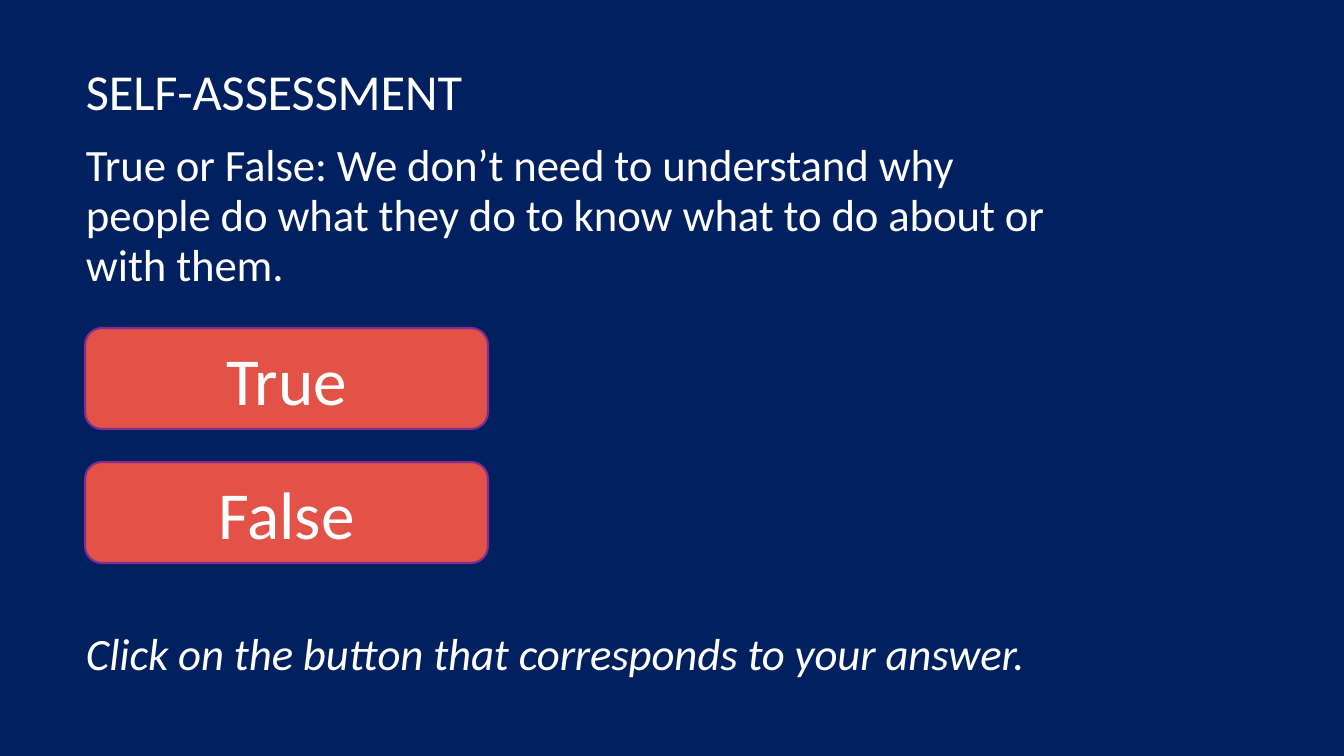
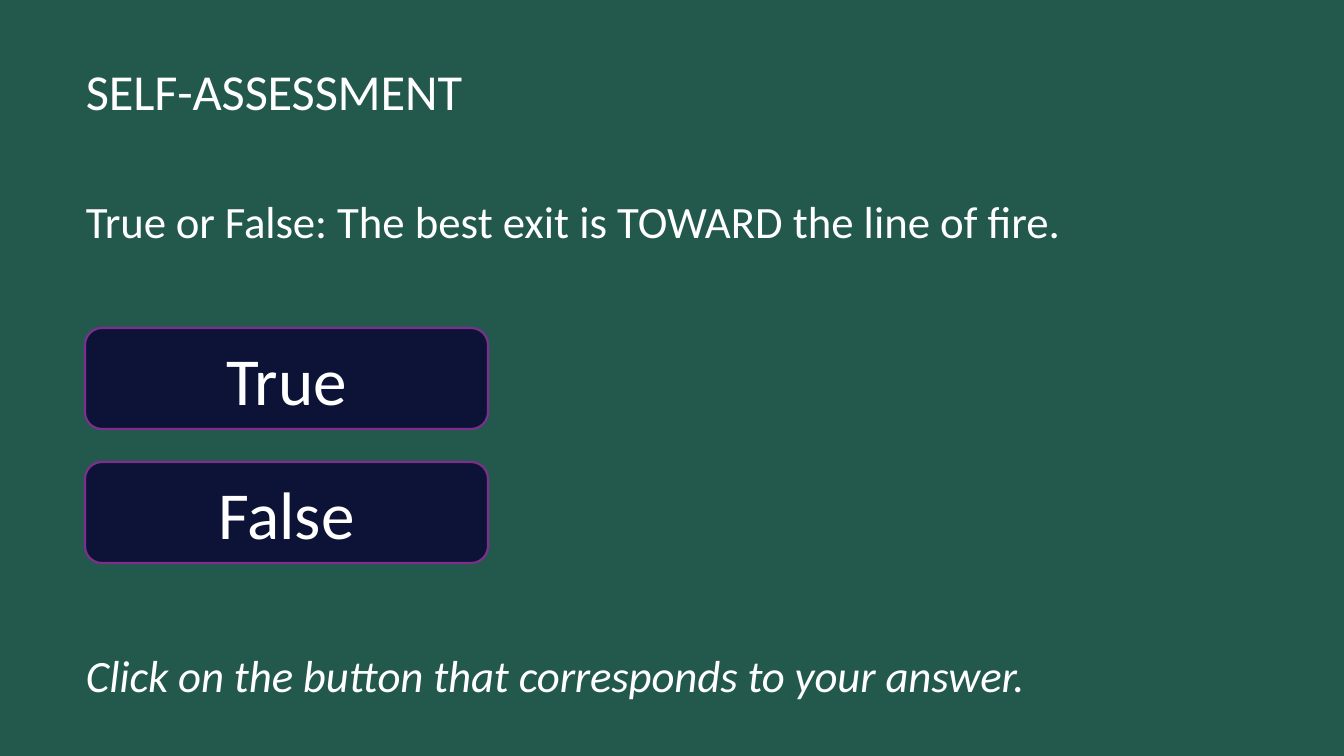
from lxml import etree
from pptx import Presentation
from pptx.dml.color import RGBColor
from pptx.enum.shapes import MSO_SHAPE
from pptx.enum.text import MSO_ANCHOR, MSO_AUTO_SIZE, PP_ALIGN
from pptx.oxml.ns import qn
from pptx.util import Emu, Pt

ROUNDED = MSO_SHAPE.ROUNDED_RECTANGLE
MIDDLE, TOP = MSO_ANCHOR.MIDDLE, MSO_ANCHOR.TOP
LEFT, CENTER = PP_ALIGN.LEFT, PP_ALIGN.CENTER
NO_FIT = MSO_AUTO_SIZE.NONE

SCALE = 914400 / 100.8
FONT = "Calibri"
COLORS = {
    "white": "FFFFFF",
    "navy": "002060",
    "green": "23594C",
    "coral": "E25247",
    "midnight": "0C1336",
    "purple": "7F2E8F",
}
MARGIN = 85
BUTTON_WIDTH, BUTTON_HEIGHT = 403, 101
BUTTON_TOP, BUTTON_STEP = 328, 134
LINE_HEIGHT = 35.7
TIGHT = -10
HINT = "Click on the button that corresponds to your answer."

QUESTIONS = [
    {
        "background": "navy",
        "button": "coral",
        "top": 134,
        "height": 558,
        "hint_gap": 242.1,
        "spans": [
            ("True or False: We don’t need to understand why people do what "
             "they do to know what to do about or with them.", TIGHT),
        ],
    },
    {
        "background": "green",
        "button": "midnight",
        "top": 191,
        "height": 524,
        "hint_gap": 288.4,
        "spans": [
            ("True or False: ", TIGHT),
            ("The best exit is TOWARD the line of fire.", 0),
        ],
    },
]


def place(box, left, top, width, height, inset_top, anchor):
    box.left, box.top, box.width, box.height = (
        Emu(round(value * SCALE)) for value in (left, top, width, height))
    frame = box.text_frame
    frame.auto_size = NO_FIT
    frame.word_wrap = True
    frame.vertical_anchor = anchor
    frame.margin_left = Emu(round(SCALE))
    frame.margin_top = Emu(round(inset_top * SCALE))
    frame.margin_right = frame.margin_bottom = 0
    return frame


def add_span(para, text, size, spacing=0, italic=False):
    span = para.add_run()
    span.text = text
    span.font.name = FONT
    span.font.size = Pt(size)
    span.font.italic = italic
    span.font.color.rgb = RGBColor.from_string(COLORS["white"])
    span.font._element.set("spc", str(spacing))


deck = Presentation()
deck.slide_width = Emu(round(1344 * SCALE))
deck.slide_height = Emu(round(756 * SCALE))

for question in QUESTIONS:
    page = deck.slides.add_slide(deck.slide_layouts[1])
    page.background.fill.solid()
    page.background.fill.fore_color.rgb = RGBColor.from_string(
        COLORS[question["background"]])

    title = place(page.shapes.title, MARGIN, 58, 514, 64, 1, MIDDLE)
    title.paragraphs[0].alignment = LEFT
    add_span(title.paragraphs[0], "SELF-ASSESSMENT", 36, TIGHT)

    body = place(page.placeholders[1], MARGIN, question["top"], 990,
                 question["height"], 7, TOP)
    prompt, hint = body.paragraphs[0], body.add_paragraph()
    for para, gap in ((prompt, 0), (hint, question["hint_gap"])):
        properties = para._p.get_or_add_pPr()
        properties.set("marL", "0")
        properties.set("indent", "0")
        etree.SubElement(properties, qn("a:buNone"))
        para.alignment = LEFT
        para.line_spacing = Pt(LINE_HEIGHT)
        para.space_before = Pt(gap)
    for text, spacing in question["spans"]:
        add_span(prompt, text, 32, spacing)
    add_span(hint, HINT, 32, TIGHT, italic=True)

    for index, answer in enumerate(("True", "False")):
        top = BUTTON_TOP + index * BUTTON_STEP
        button = page.shapes.add_shape(
            ROUNDED, *(Emu(round(value * SCALE)) for value in
                       (MARGIN, top, BUTTON_WIDTH, BUTTON_HEIGHT)))
        button.shadow.inherit = False
        button.fill.solid()
        button.fill.fore_color.rgb = RGBColor.from_string(
            COLORS[question["button"]])
        button.line.color.rgb = RGBColor.from_string(COLORS["purple"])
        button.line.width = Pt(1.5)
        button.text_frame.vertical_anchor = MIDDLE
        label = button.text_frame.paragraphs[0]
        label.alignment = CENTER
        add_span(label, answer, 48)

deck.save("out.pptx")
